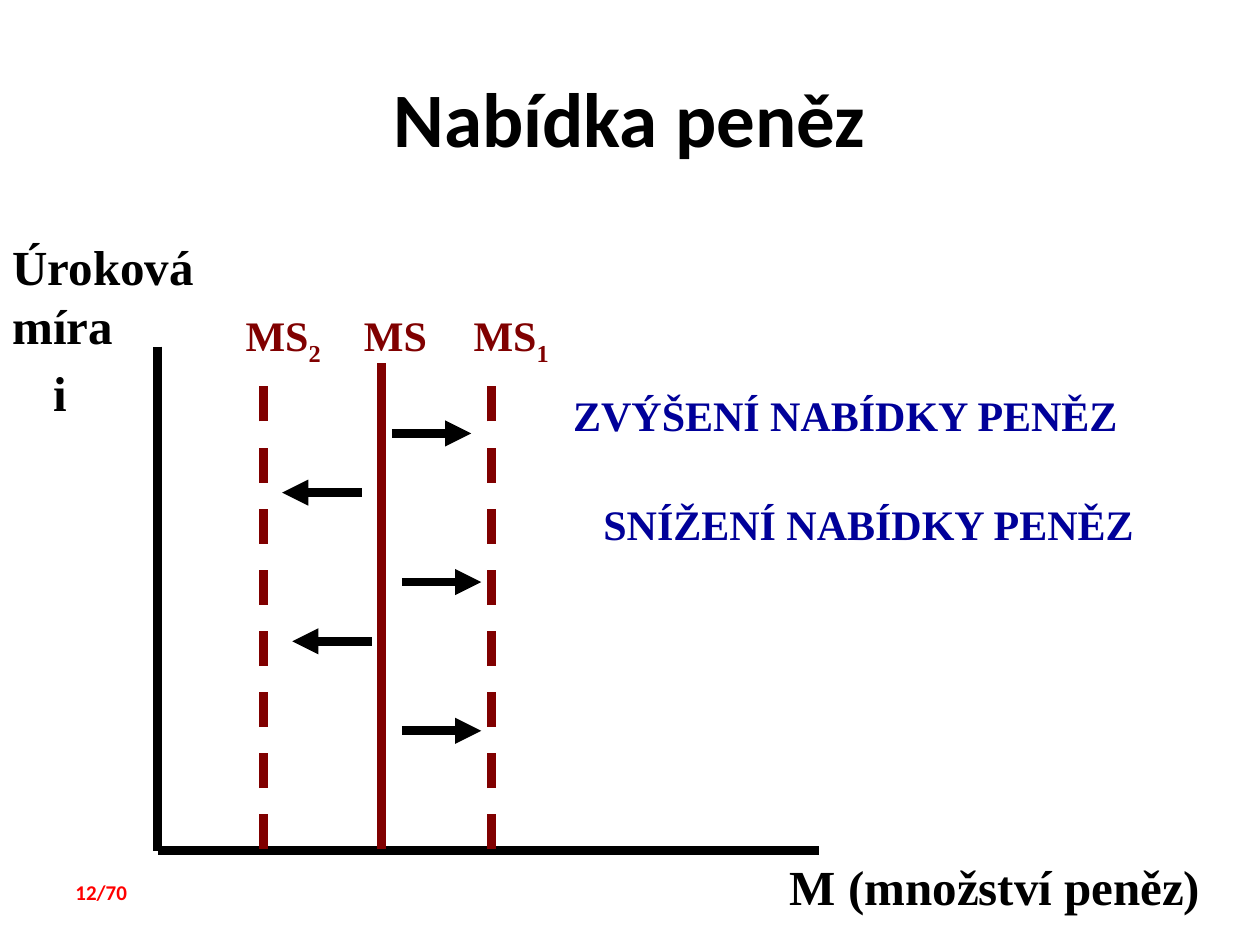
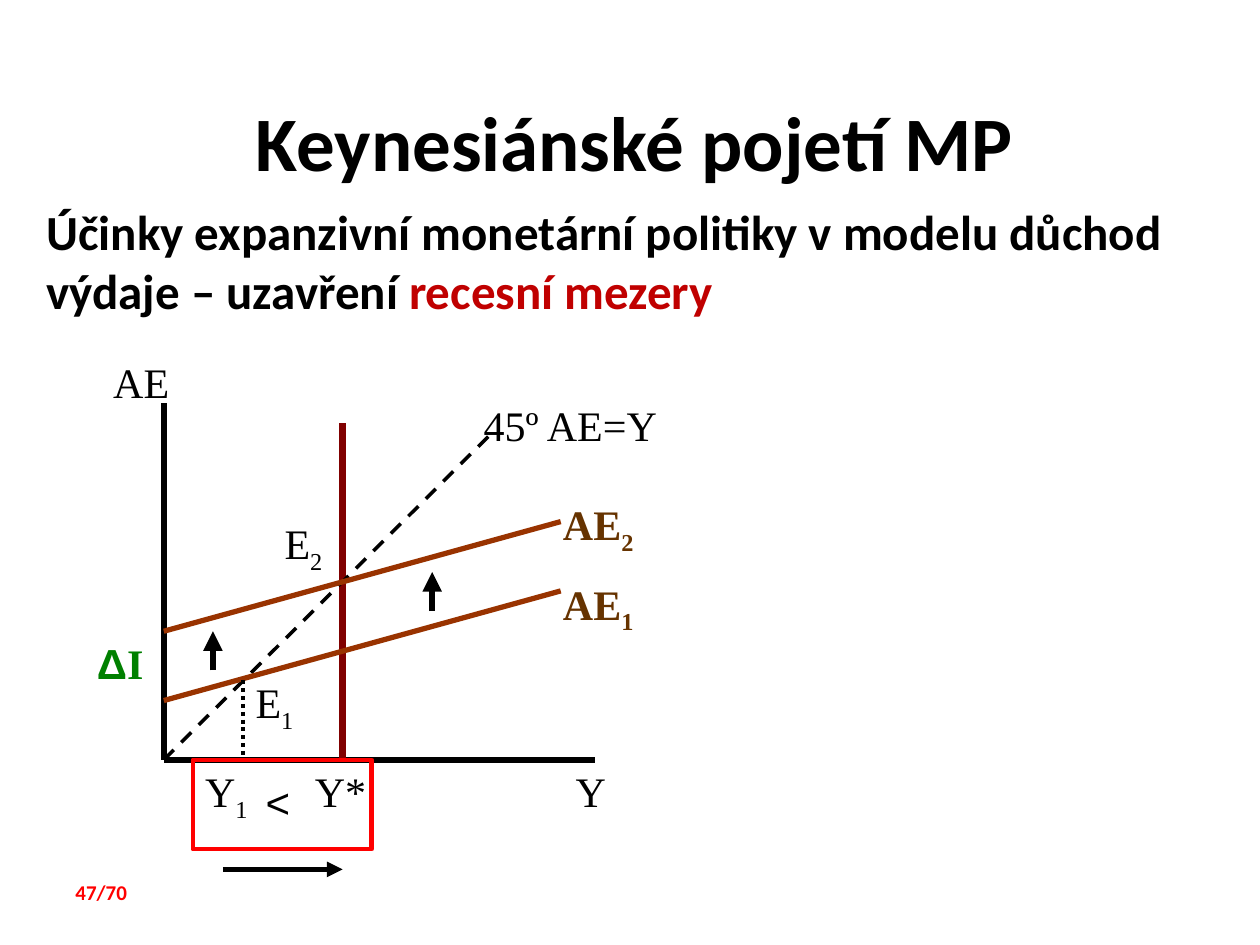
"""Builds two economics slides: money supply shifts and Keynesian monetary policy."""
from dataclasses import dataclass

from lxml import etree
from pptx import Presentation
from pptx.dml.color import RGBColor
from pptx.enum.dml import MSO_LINE
from pptx.enum.shapes import MSO_CONNECTOR, MSO_SHAPE
from pptx.enum.text import MSO_ANCHOR, PP_ALIGN
from pptx.oxml.ns import qn
from pptx.util import Inches, Pt

STRAIGHT = MSO_CONNECTOR.STRAIGHT
RECT = MSO_SHAPE.RECTANGLE
DASH, DOT = MSO_LINE.DASH, MSO_LINE.ROUND_DOT
CENTER, MIDDLE, TOP = PP_ALIGN.CENTER, MSO_ANCHOR.MIDDLE, MSO_ANCHOR.TOP


@dataclass(frozen=True)
class Theme:
    black: str = "000000"
    maroon: str = "800000"
    navy: str = "000099"
    rust: str = "993300"
    brown: str = "663300"
    green: str = "008000"
    red: str = "FF0000"
    crimson: str = "C00000"
    serif: str = "Times New Roman"
    sans: str = "Calibri"
    symbol: str = "Arial"
    title: int = 44
    large: int = 28
    label: int = 24
    footer: int = 12


T = Theme()
WIDTH, HEIGHT = 10, 7.5
LABEL_H = 0.5

SUPPLY = {
    "title": ("Nabídka peněz", (0.5, 0.3, 9, 1.25)),
    "page": "12/70",
    "axis_labels": [("Úroková míra", (0, 1.83, 2.25, 1.03)),
                    ("M (množství peněz)", (6.17, 6.75, 3.58, 0.57)),
                    ("i", (0.33, 2.83, 0.67, 0.57))],
    "origin": (1.25, 6.75),
    "axis_ends": (6.5, 2.75),
    "curves": [("MS", 3.03, None), ("MS_1", 3.9, DASH), ("MS_2", 2.09, DASH)],
    "curve_span": (6.74, 2.88),
    "arrow_starts": [(3.11, 2.87), (3.19, 2.95), (3.19, None)],
    "notes": [("ZVÝŠENÍ NABÍDKY PENĚZ", 4.45, 3.04),
              ("SNÍŽENÍ NABÍDKY PENĚZ", 4.69, 3.91)],
}

KEYNES = {
    "title": ("Keynesiánské pojetí MP", (0.04, 0.49, WIDTH, 1.25)),
    "page": "47/70",
    "lead": [("Účinky expanzivní monetární politiky v modelu důchod výdaje – uzavření ", {}),
             ("recesní mezery", {"color": T.crimson})],
    "origin": (1.3, 6.03),
    "axis_ends": (4.72, 3.2),
    "potential": (2.72, 3.36),
    "spending": [("AE_1", 5.56), ("AE_2", 5.01)],
    "labels": [("AE", 0.8, 2.78), ("Y", 4.47, 6.03), ("Y*", 2.4, 6.03),
               ("Y_1", 1.53, 6.03), ("E_1", 1.93, 5.32), ("E_2", 2.16, 4.06)],
    "shift_arrows": [(1.69, 5.32), (3.43, 4.85)],
}


def start_slide(prs, content):
    s = prs.slides.add_slide(prs.slide_layouts[6])
    title, box = content["title"]
    add_text(s, title, box, T.title, font=T.sans, bold=True, align=CENTER, anchor=MIDDLE)
    add_text(s, content["page"], (0.5, 6.93, 0.92, 0.3), T.footer, T.red, T.sans, True)
    return s


def add_text(s, text, box, size=T.label, color=T.black, font=T.serif, bold=False,
             align=None, anchor=TOP):
    tf = s.shapes.add_textbox(*map(Inches, box)).text_frame
    tf.word_wrap = True
    tf.vertical_anchor = anchor
    p = tf.paragraphs[0]
    p.alignment = align
    p.font.size, p.font.bold = Pt(size), bold
    runs = [(text, {})] if isinstance(text, str) else text
    for words, style in runs:
        base, _, subscript = words.partition("_")
        for part, lowered in ((base, False), (subscript, True)):
            if not part:
                continue
            r = p.add_run()
            r.text = part
            r.font.size, r.font.bold = Pt(size), bold
            r.font.name = style.get("font", font)
            r.font.color.rgb = RGBColor.from_string(style.get("color", color))
            if lowered:
                r.font._element.set("baseline", "-25000")


def add_line(s, start, end, weight, color=T.black, dash=None, arrow=False):
    sp = s.shapes.add_connector(STRAIGHT, *map(Inches, (*start, *end)))
    sp.line.color.rgb = RGBColor.from_string(color)
    sp.line.width = Pt(weight)
    if dash is not None:
        sp.line.dash_style = dash
    if arrow:
        etree.SubElement(sp.line._get_or_add_ln(), qn("a:tailEnd"), type="triangle")
    etree.SubElement(sp._element.spPr, qn("a:effectLst"))


def add_axes(s, content, vertical, horizontal):
    x, y = content["origin"]
    right, top = content["axis_ends"]
    add_line(s, (x, top), (x, y), vertical)
    add_line(s, (x, y), (right, y), horizontal)


def build_supply(prs):
    s = start_slide(prs, SUPPLY)
    for text, box in SUPPLY["axis_labels"]:
        add_text(s, text, box, T.large, bold=True)
    add_axes(s, SUPPLY, 5.5, 5)
    bottom, top = SUPPLY["curve_span"]
    for name, x, dash in SUPPLY["curves"]:
        add_line(s, (x, bottom), (x, top), 5, T.maroon, dash)
        add_text(s, name, (x - 0.24, 2.41, 1.42, LABEL_H), color=T.maroon, bold=True)
    length, row, drop = 0.63, 1.18, 0.47
    for i, (right_x, left_x) in enumerate(SUPPLY["arrow_starts"]):
        y = 3.44 + i * row
        add_line(s, (right_x, y), (right_x + length, y), 5, arrow=True)
        if left_x is not None:
            add_line(s, (left_x, y + drop), (left_x - length, y + drop), 5, arrow=True)
    for text, x, y in SUPPLY["notes"]:
        add_text(s, text, (x, y, 4.72, LABEL_H), color=T.navy, bold=True)


def build_keynes(prs):
    s = start_slide(prs, KEYNES)
    x0, y0 = KEYNES["origin"]
    add_axes(s, KEYNES, 3.5, 3.5)
    x, top = KEYNES["potential"]
    add_line(s, (x, y0), (x, top), 4, T.maroon)
    add_line(s, (x0, y0), (3.9, 3.44), 2, dash=DASH)
    rise, end_x = 0.87, 4.45
    for i, (name, y) in enumerate(KEYNES["spending"]):
        add_line(s, (x0, y), (end_x, y - rise), 3, T.rust)
        add_text(s, name, (4.37, 4.54 - i * 0.63, 0.94, LABEL_H), color=T.brown, bold=True)
    add_line(s, (1.93, 5.4), (1.93, y0), 2.25, dash=DOT)

    gap = s.shapes.add_shape(RECT, *map(Inches, (1.53, y0, 1.42, 0.71)))
    gap.shadow.inherit = False
    gap.fill.background()
    gap.line.color.rgb = RGBColor.from_string(T.red)
    gap.line.width = Pt(2.5)

    for text, x, y in KEYNES["labels"]:
        add_text(s, text, (x, y, 0.92, LABEL_H))
    add_text(s, "<", (2.01, 6.11, 0.55, LABEL_H), font=T.symbol)
    add_text(s, "45º AE=Y", (3.74, 3.12, 2.44, LABEL_H))
    add_text(s, [("Δ", {"font": T.symbol}), ("I", {})], (0.67, 5.01, 0.92, LABEL_H),
             color=T.green, bold=True)
    for x, y in KEYNES["shift_arrows"]:
        add_line(s, (x, y), (x, y - 0.31), 3.75, arrow=True)
    add_line(s, (1.77, 6.9), (2.72, 6.9), 3, arrow=True)
    add_text(s, KEYNES["lead"], (0.27, 1.55, 9.45, 1.05), T.large, font=T.sans, bold=True)


def main():
    prs = Presentation()
    prs.slide_width, prs.slide_height = Inches(WIDTH), Inches(HEIGHT)
    build_supply(prs)
    build_keynes(prs)
    prs.save("out.pptx")


if __name__ == "__main__":
    main()
